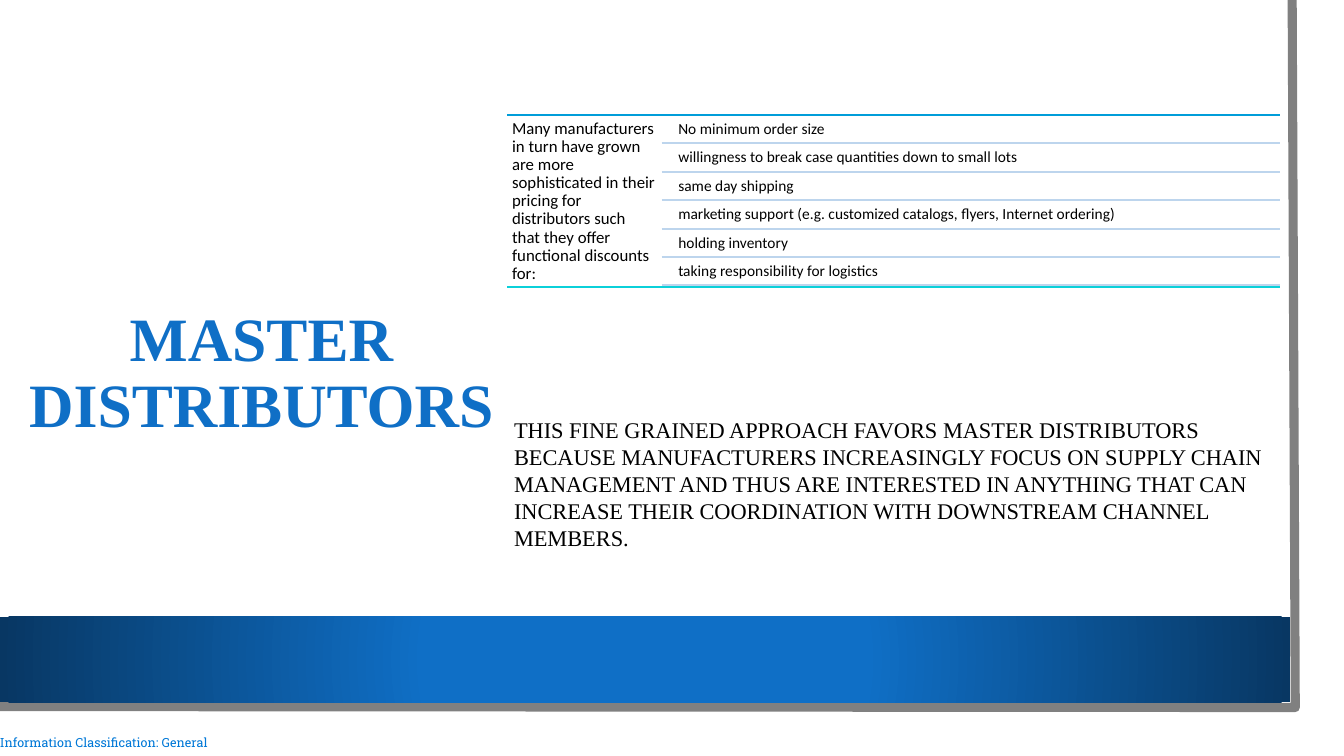
from lxml import etree
from pptx import Presentation
from pptx.dml.color import RGBColor
from pptx.enum.shapes import MSO_CONNECTOR, MSO_SHAPE
from pptx.enum.text import MSO_ANCHOR, PP_ALIGN
from pptx.oxml import parse_xml
from pptx.oxml.ns import nsdecls, qn
from pptx.util import Pt

RECTANGLE = MSO_SHAPE.RECTANGLE
STRAIGHT = MSO_CONNECTOR.STRAIGHT
TOP, MIDDLE = MSO_ANCHOR.TOP, MSO_ANCHOR.MIDDLE
LEFT, CENTER = PP_ALIGN.LEFT, PP_ALIGN.CENTER

BLUE, NAVY, BLACK, WHITE, GRAY = "0F6FC6", "083763", "000000", "FFFFFF", "808080"
TOP_RULE, ROW_RULE, BOTTOM_RULE, FOOTER_BLUE = "009DD9", "BDD5ED", "0BD0D9", "0078D7"

TITLE_FORMAT = {"size": Pt(44), "name": "Times New Roman", "bold": True}
INTRO_FORMAT = {"size": Pt(12), "name": "Calibri"}
ROW_FORMAT = {"size": Pt(11), "name": "Calibri"}
CLOSING_FORMAT = {"size": Pt(16), "name": "Times New Roman"}
FOOTER_FORMAT = {"size": Pt(9), "name": "Roboto Slab"}

INTRO = ("Many manufacturers in turn have grown are more sophisticated in their pricing "
         "for distributors such that they offer functional discounts for:")
SERVICES = [
    "No minimum order size",
    "willingness to break case quantities down to small lots",
    "same day shipping",
    "marketing support (e.g. customized catalogs, flyers, Internet ordering)",
    "holding inventory",
    "taking responsibility for logistics",
]
CLOSING = ("THIS FINE GRAINED APPROACH FAVORS MASTER DISTRIBUTORS BECAUSE MANUFACTURERS "
           "INCREASINGLY FOCUS ON SUPPLY CHAIN MANAGEMENT AND THUS ARE INTERESTED IN ANYTHING "
           "THAT CAN INCREASE THEIR COORDINATION WITH DOWNSTREAM CHANNEL MEMBERS.")


def color(value):
    """Return the colour for a hex string."""
    return RGBColor.from_string(value)


def add_text(slide, box, text, font_format, ink=BLACK, inset=0, anchor=TOP,
             alignment=LEFT, spacing=0.9, wrap=True):
    """Add one paragraph of text in a box given in points."""
    frame = slide.shapes.add_textbox(*map(Pt, box)).text_frame
    frame_format = {"word_wrap": wrap, "vertical_anchor": anchor}
    frame_format.update({f"margin_{side}": Pt(inset) for side in ("left", "top", "right", "bottom")})
    for name, value in frame_format.items():
        setattr(frame, name, value)
    paragraph = frame.paragraphs[0]
    paragraph.text = text
    paragraph.alignment = alignment
    paragraph.line_spacing = spacing
    for name, value in font_format.items():
        setattr(paragraph.font, name, value)
    paragraph.font.color.rgb = color(ink)


def add_rule(slide, left, right, top, ink):
    """Add a horizontal rule between two places."""
    rule = slide.shapes.add_connector(STRAIGHT, Pt(left), Pt(top), Pt(right), Pt(top))
    rule.line.color.rgb = color(ink)
    rule.line.width = Pt(1.5)
    etree.SubElement(rule._element.spPr, qn("a:effectLst"))


def add_rectangle(slide, box, fill):
    """Add a plain rectangle without outline or shadow."""
    shape = slide.shapes.add_shape(RECTANGLE, *map(Pt, box))
    shape.shadow.inherit = False
    shape.line.fill.background()
    shape.fill.solid()
    shape.fill.fore_color.rgb = color(fill)
    return shape


def add_backdrop(slide, left, top, width, height):
    """Add the white page, its gray edge and the gradient band."""
    add_rectangle(slide, (left, top, width, height), WHITE)
    builder = slide.shapes.build_freeform(Pt(left + 923), Pt(top), 1.0)
    corners = [(left + 925.2, top + 505.4), (left - 2.2, top + 504.7)]
    builder.add_line_segments([(Pt(x), Pt(y)) for x, y in corners], close=False)
    edge = builder.convert_to_shape()
    edge.shadow.inherit = False
    edge.fill.background()
    edge.line.color.rgb = color(GRAY)
    edge.line.width = Pt(6.5)
    band = add_rectangle(slide, (left, top + 440.6, 921.6, 61.2), BLUE)
    solid = band._element.spPr.find(qn("a:solidFill"))
    gradient = parse_xml(
        f'<a:gradFill {nsdecls("a")} rotWithShape="1"><a:gsLst>'
        f'<a:gs pos="34000"><a:srgbClr val="{BLUE}"/></a:gs>'
        f'<a:gs pos="100000"><a:srgbClr val="{NAVY}"/></a:gs></a:gsLst>'
        '<a:path path="circle"><a:fillToRect l="50000" t="50000" r="50000" b="50000"/></a:path>'
        '</a:gradFill>')
    band._element.spPr.replace(solid, gradient)


def add_discounts(slide, left, top, width, height):
    """Add the introduction with its ruled list of services."""
    right = left + width
    list_left = left + width / 5
    text_left = list_left + 8.3
    pitch = 20.3
    add_rule(slide, left, right, top, TOP_RULE)
    add_text(slide, (left, top, width / 5, height), INTRO, INTRO_FORMAT, inset=3.6)
    for index, service in enumerate(SERVICES):
        row_top = top + 1 + index * pitch
        add_text(slide, (text_left, row_top, right - text_left, 19.4), service, ROW_FORMAT, inset=3.6)
        add_rule(slide, list_left, right, row_top + 19.4, ROW_RULE)
    add_rule(slide, left, right, top + height, BOTTOM_RULE)


def main():
    """Build and save the slide."""
    presentation = Presentation()
    presentation.slide_width, presentation.slide_height = Pt(960), Pt(540)
    slide = presentation.slides.add_slide(presentation.slide_layouts[6])
    add_backdrop(slide, 0, 0, 943.2, 523.4)
    add_text(slide, (0, 521.3, 167.8, 18.7), "Information Classification: General",
             FOOTER_FORMAT, FOOTER_BLUE, inset=0, anchor=MIDDLE, spacing=1.0, wrap=False)
    add_text(slide, (11.5, 82, 350.7, 371), "MASTER DISTRIBUTORS", TITLE_FORMAT, BLUE,
             inset=7.2, anchor=MIDDLE, alignment=CENTER)
    add_discounts(slide, 362.2, 82, 552.2, 123.2)
    add_text(slide, (362.2, 292, 552.2, 107), CLOSING, CLOSING_FORMAT, inset=5, spacing=Pt(19.3))
    presentation.save("out.pptx")


if __name__ == "__main__":
    main()
